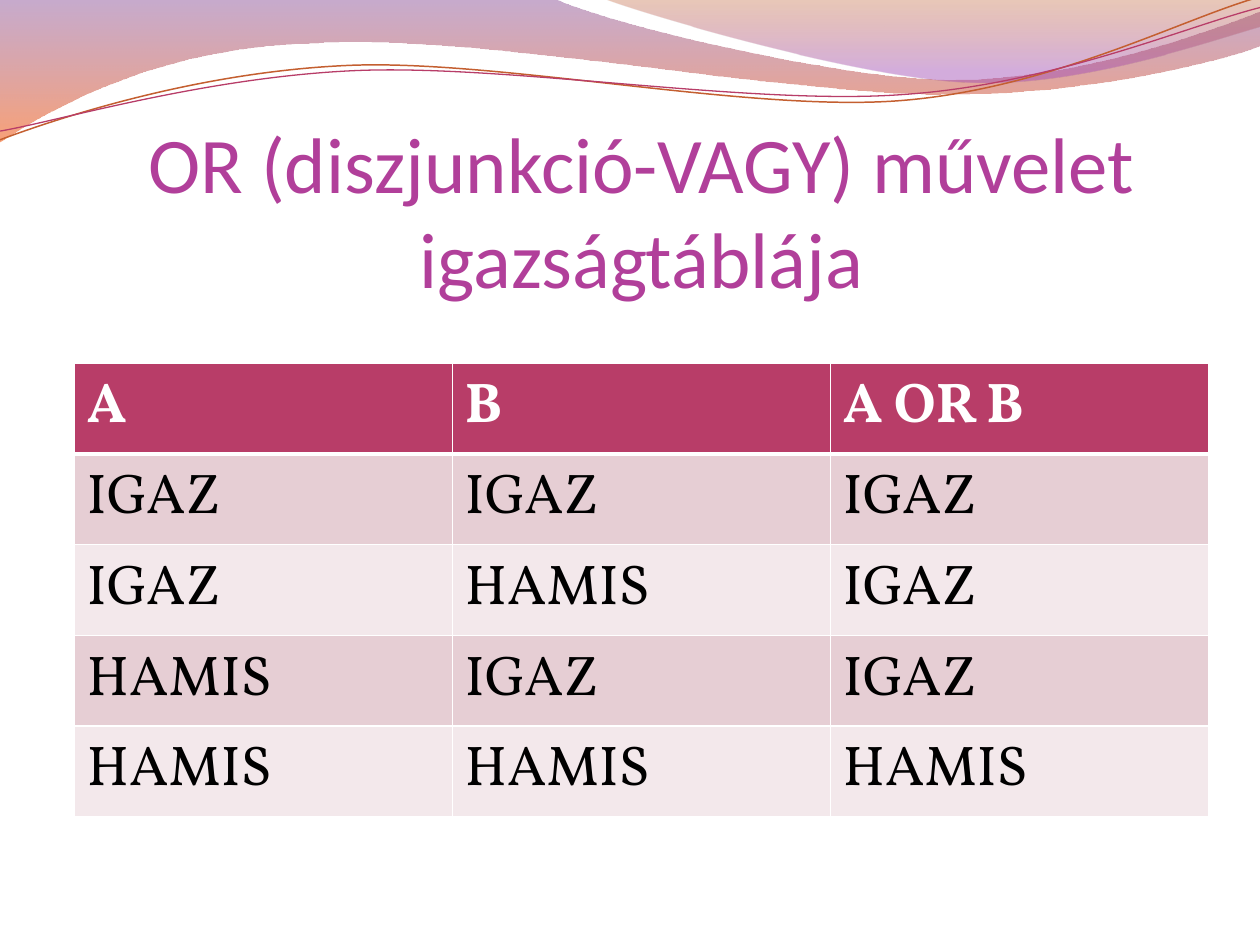
import dataclasses

import lxml.etree
import pptx
import pptx.dml.color
import pptx.enum.text
import pptx.oxml.ns
import pptx.util

Pt = pptx.util.Pt
qn = pptx.oxml.ns.qn


@dataclasses.dataclass(frozen=True)
class Theme:
    title_font: str = "Calibri"
    table_font: str = "Vollkorn"
    title_size: int = 45
    table_size: int = 32
    title: str = "B13F9A"
    header: str = "B83D68"
    header_text: str = "FFFFFF"
    cell_text: str = "000000"
    border: str = "FFFFFF"
    bands: tuple = ("E6CED4", "F3E8EB")
    wide_wave: tuple = ((0, "834591", 45), (1, "F35307", 55))
    right_wave: tuple = ((0, "B74915", 30), (0.8, "A14BB4", 45))
    upper_line: str = "C45F30"
    lower_line: str = "B83D68"


def color(value):
    return pptx.dml.color.RGBColor.from_string(value)


class SlideBuilder:
    def __init__(self, slide, theme):
        self.slide = slide
        self.theme = theme

    def curve(self, start, segments, close):
        points = [(Pt(x), Pt(y)) for segment in segments
                  for x, y in zip(segment[::2], segment[1::2])]
        builder = self.slide.shapes.build_freeform(Pt(start[0]), Pt(start[1]))
        builder.add_line_segments(points, close=close)
        shape = builder.convert_to_shape()
        shape.shadow.inherit = False
        corners = iter(list(shape.element.spPr.iter(qn("a:lnTo"))))
        for segment in segments:
            corner = next(corners)
            if len(segment) == 6:
                bezier = lxml.etree.Element(qn("a:cubicBezTo"))
                corner.addprevious(bezier)
                for part in (corner, next(corners), next(corners)):
                    bezier.append(part[0])
                    part.getparent().remove(part)
        return shape

    def wave(self, start, segments, stops):
        shape = self.curve(start, segments, True)
        shape.line.fill.background()
        shape.fill.gradient()
        shape.fill.gradient_angle = 270
        for stop, (position, value, _) in zip(shape.fill.gradient_stops, stops):
            stop.position = position
            stop.color.rgb = color(value)
        elements = shape.element.spPr.iter(qn("a:srgbClr"))
        for element, (_, _, opacity) in zip(elements, stops):
            alpha = lxml.etree.SubElement(element, qn("a:alpha"))
            alpha.set("val", str(opacity * 1000))

    def line(self, start, segments, value, width):
        shape = self.curve(start, segments, False)
        shape.fill.background()
        shape.line.color.rgb = color(value)
        shape.line.width = Pt(width)

    def format_text(self, paragraph, font_name, size, value, bold=False):
        for run in paragraph.runs:
            run.font.name = font_name
            run.font.size = Pt(size)
            run.font.color.rgb = color(value)
            run.font.bold = bold

    def title(self, text, left, top, width, height):
        shape = self.slide.shapes.title
        shape.element.getparent().append(shape.element)
        shape.left, shape.top = Pt(left), Pt(top)
        shape.width, shape.height = Pt(width), Pt(height)
        frame = shape.text_frame
        frame.text = text
        frame.word_wrap = True
        frame.auto_size = pptx.enum.text.MSO_AUTO_SIZE.NONE
        frame.vertical_anchor = pptx.enum.text.MSO_ANCHOR.BOTTOM
        frame.margin_left = frame.margin_right = frame.margin_bottom = 0
        frame.margin_top = Pt(3.6)
        paragraph = frame.paragraphs[0]
        paragraph.alignment = pptx.enum.text.PP_ALIGN.CENTER
        self.format_text(paragraph, self.theme.title_font,
                         self.theme.title_size, self.theme.title)

    def borders(self, cell, bottom_width):
        properties = cell._tc.get_or_add_tcPr()
        widths = (("lnL", 1), ("lnR", 1), ("lnT", 1), ("lnB", bottom_width))
        for index, (side, width) in enumerate(widths):
            border = lxml.etree.Element(qn(f"a:{side}"), w=str(Pt(width)))
            fill = lxml.etree.SubElement(border, qn("a:solidFill"))
            lxml.etree.SubElement(fill, qn("a:srgbClr"), val=self.theme.border)
            properties.insert(index, border)

    def table(self, rows, left, top, width, row_height):
        theme = self.theme
        table = self.slide.shapes.add_table(
            len(rows), len(rows[0]), Pt(left), Pt(top),
            Pt(width), Pt(row_height * len(rows))).table
        for row_index, row in enumerate(rows):
            is_header = row_index == 0
            fill = theme.header if is_header else theme.bands[(row_index - 1) % 2]
            text_color = theme.header_text if is_header else theme.cell_text
            for column_index, text in enumerate(row):
                cell = table.cell(row_index, column_index)
                cell.fill.solid()
                cell.fill.fore_color.rgb = color(fill)
                if row_index != 1:
                    self.borders(cell, 3 if is_header else 1)
                cell.text_frame.text = text
                self.format_text(cell.text_frame.paragraphs[0], theme.table_font,
                                 theme.table_size, text_color, is_header)


def main():
    presentation = pptx.Presentation()
    presentation.slide_width, presentation.slide_height = Pt(720), Pt(540)
    theme = Theme()
    slide = presentation.slides.add_slide(presentation.slide_layouts[5])
    builder = SlideBuilder(slide, theme)

    builder.wave((0, 0), [
        (316.8, -0.7),
        (342.7, 12.2, 478.1, 45.4, 545.8, 45.4),
        (614.2, 45.4, 689.8, 18.7, 720, 6.5),
        (720.7, 25.9),
        (707.8, 31.7, 626.4, 54.7, 537.1, 54),
        (447.8, 54, 275, 20.2, 185, 24.5),
        (92.9, 25.9, 33.1, 59.8, -0.7, 81.4),
    ], theme.wide_wave)
    builder.wave((344.9, -0.7), [
        (366.5, 7.9, 491, 44.6, 553.7, 46.8),
        (616.3, 49.7, 691.9, 23, 720, 15.1),
        (720, 0),
    ], theme.right_wave)
    builder.line((0, 79.9), [
        (34.6, 67, 113.8, 41, 199.4, 37.4),
        (284.4, 33.8, 427, 64.1, 513.4, 57.6),
        (599.8, 51.1, 675.4, 10.8, 718.6, -1.4),
    ], theme.upper_line, 0.85)
    builder.line((0, 74.9), [
        (33.8, 69.1, 118.1, 43.9, 203.8, 40.3),
        (290.2, 36.7, 429.8, 60.5, 516.2, 54),
        (601.9, 48.2, 677.5, 15.1, 720, 4.3),
    ], theme.lower_line, 0.75)

    builder.title("OR (diszjunkció-VAGY) művelet igazságtáblája",
                  42.5, 94.5, 648, 79.2)
    builder.table([
        ("A", "B", "A OR B"),
        ("IGAZ", "IGAZ", "IGAZ"),
        ("IGAZ", "HAMIS", "IGAZ"),
        ("HAMIS", "IGAZ", "IGAZ"),
        ("HAMIS", "HAMIS", "HAMIS"),
    ], 42.5, 207.5, 648, 44)

    presentation.save("out.pptx")


if __name__ == "__main__":
    main()
